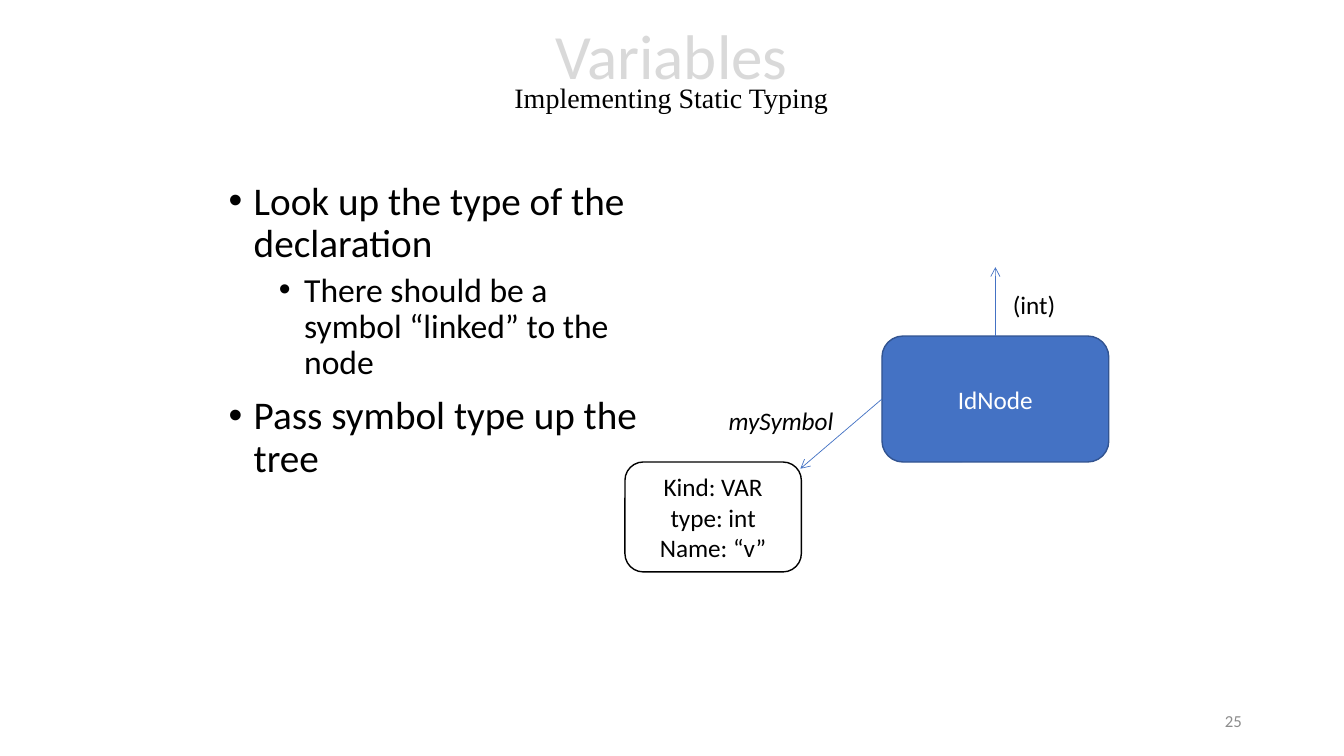
from lxml.etree import SubElement
from pptx import Presentation
from pptx.dml.color import RGBColor
from pptx.enum.shapes import MSO_CONNECTOR, MSO_SHAPE
from pptx.enum.text import MSO_ANCHOR, PP_ALIGN
from pptx.oxml.ns import qn
from pptx.util import Pt

BLACK, WHITE, BLUE = "000000", "FFFFFF", "4472C4"
HEADS = [("Variables", 45, "Calibri", "D9D9D9"),
         ("Implementing Static Typing", 20, "Times New Roman", BLACK)]
POINTS = [(0, "Look up the type of the declaration"),
          (1, "There should be a symbol “linked” to the node"),
          (0, "Pass symbol type up the tree")]
LEVELS = [(28, 18, 10), (24, 54, 5)]
NODE = ("IdNode", (630, 240, 162, 90), BLUE, "325491", WHITE)
SYMBOL = ("Kind: VAR\ntype: int\nName: “v”", (446.4, 330, 126, 78.5),
          WHITE, BLACK, BLACK)
ARROWS = [(1, (571.7, 334.8)), (0, (711, 190.8))]
LABELS = [("mySymbol", (513.4, 285.8, 90, 29), True),
          ("(int)", (716.4, 203, 45.4, 29), False)]


def color(text):
    return RGBColor.from_string(text)


def style(run, size, tint=BLACK, face="Calibri"):
    run.font.size = Pt(size)
    run.font.name = face
    run.font.color.rgb = color(tint)


def add_text(text, box, wrap=True):
    frame = slide.shapes.add_textbox(*map(Pt, box)).text_frame
    frame.word_wrap = wrap
    frame.text = text
    return frame


def add_box(text, box, fill, edge, tint):
    shape = slide.shapes.add_shape(MSO_SHAPE.ROUNDED_RECTANGLE, *map(Pt, box))
    shape.shadow.inherit = False
    shape.fill.solid()
    shape.fill.fore_color.rgb = color(fill)
    shape.line.color.rgb = color(edge)
    shape.line.width = Pt(1)
    frame = shape.text_frame
    frame.word_wrap = True
    frame.vertical_anchor = MSO_ANCHOR.MIDDLE
    frame.text = text
    for para in frame.paragraphs:
        para.alignment = PP_ALIGN.CENTER
        style(para.runs[0], 18, tint)
    return shape


def add_arrow(shape, side, end):
    line = slide.shapes.add_connector(
        MSO_CONNECTOR.STRAIGHT, 0, 0, *map(Pt, end))
    line.begin_connect(shape, side)
    line.line.color.rgb = color(BLUE)
    line.line.width = Pt(0.5)
    props = line.line._get_or_add_ln()
    SubElement(props, qn("a:tailEnd"), type="arrow")
    SubElement(props.getparent(), qn("a:effectLst"))


deck = Presentation()
deck.slide_width, deck.slide_height = Pt(960), Pt(540)
slide = deck.slides.add_slide(deck.slide_layouts[6])

title = add_text("\v".join(head[0] for head in HEADS),
                 (169.2, 1.4, 620.6, 104.4))
title.vertical_anchor = MSO_ANCHOR.MIDDLE
para = title.paragraphs[0]
para.alignment = PP_ALIGN.CENTER
para.line_spacing = 0.7
for run, (text, size, face, tint) in zip(para.runs, HEADS):
    style(run, size, tint, face)

body = add_text("\n".join(text for level, text in POINTS),
                (156.2, 126, 311.8, 356.4))
for para, (level, text) in zip(body.paragraphs, POINTS):
    size, left, before = LEVELS[level]
    para.level = level
    para.line_spacing = 0.9
    para.space_before = Pt(before)
    style(para.runs[0], size)
    props = para._p.get_or_add_pPr()
    props.set("marL", str(Pt(left)))
    props.set("indent", str(Pt(-18)))
    SubElement(props, qn("a:buFont"), typeface="Arial")
    SubElement(props, qn("a:buChar"), char="•")

number = add_text("25", (678.2, 500.4, 216, 28.8))
number.vertical_anchor = MSO_ANCHOR.MIDDLE
number.paragraphs[0].alignment = PP_ALIGN.RIGHT
style(number.paragraphs[0].runs[0], 12, "8C8C8C")

node = add_box(*NODE)
for (side, end), (text, box, slant) in zip(ARROWS, LABELS):
    add_arrow(node, side, end)
    run = add_text(text, box, False).paragraphs[0].runs[0]
    style(run, 18)
    run.font.italic = slant
add_box(*SYMBOL)

deck.save("out.pptx")
